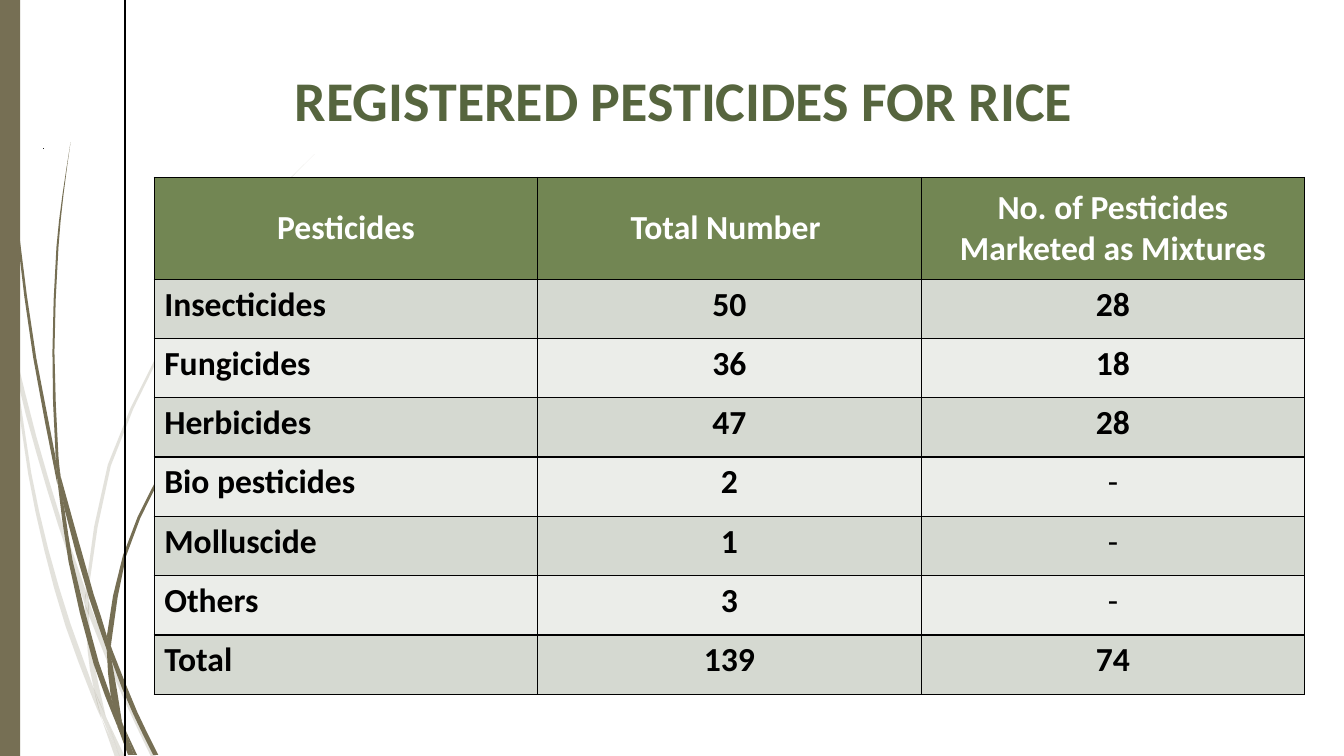
import pptx
import pptx.util
import pptx.dml.color
import pptx.enum.shapes
import pptx.enum.text
import pptx.oxml
import pptx.oxml.ns

Inches, Pt = pptx.util.Inches, pptx.util.Pt
ALIGN, ANCHOR = pptx.enum.text.PP_ALIGN, pptx.enum.text.MSO_ANCHOR

TITLE = "REGISTERED PESTICIDES FOR RICE"
HEADER = ("Pesticides", "Total Number ", "No. of Pesticides Marketed as Mixtures")
ROWS = [
    ("Insecticides", "50", "28"),
    ("Fungicides", "36", "18"),
    ("Herbicides", "47", "28"),
    ("Bio pesticides", "2", "-"),
    ("Molluscide", "1", "-"),
    ("Others", "3", "-"),
    ("Total", "139", "74"),
]

# Each blade of grass is its left edge and its right edge, from top to bottom, as (x, y) in inches.
PALE_BLADES = [
    ([(0, 2.82), (0, 2.99), (.1, 3.44), (.11, 3.5)], [(0, 2.82), (.09, 3.22), (.11, 3.5)]),
    ([(.14, 3.45), (.17, 3.76), (.36, 4.49), (.58, 5.22), (.84, 5.99)],
     [(.14, 3.45), (.36, 4.33), (.62, 5.2), (.85, 5.86), (.84, 5.99)]),
    ([(.88, 5.96), (.88, 6.1), (1.23, 6.94), (1.5, 7.51)],
     [(.88, 5.96), (.92, 6.07), (1.27, 6.92), (1.55, 7.51)]),
    ([(1.05, 7.11), (1.19, 7.51)], [(1.05, 7.11), (1.24, 7.51)]),
    ([(.11, 3.5), (.28, 4.7), (.44, 5.46), (.65, 6.21), (.92, 6.93), (1.01, 7.14)],
     [(.11, 3.5), (.17, 3.76), (.31, 4.69), (.48, 5.45), (.7, 6.19), (.93, 6.83), (1.01, 7.14)]),
    ([(.84, 5.99), (.87, 6.46), (.93, 6.83), (1.05, 7.11)],
     [(.84, 5.99), (.88, 6.08), (.91, 6.46), (1.05, 7.11)]),
    ([(3.12, 1.53), (2.68, 1.97), (2.28, 2.44), (1.91, 2.95), (1.58, 3.48), (1.07, 4.61),
      (.85, 5.84), (.88, 5.96)],
     [(3.12, 1.53), (2.68, 1.98), (2.29, 2.45), (1.93, 2.95), (1.6, 3.49), (1.1, 4.62),
      (.88, 5.84), (.88, 5.96)]),
    ([(1.01, 7.14), (1.14, 7.51)], [(1.01, 7.14), (1.19, 7.51)]),
    ([(.85, 5.86), (.84, 5.99), (.88, 6.1)], [(.85, 5.86), (.88, 5.96), (.88, 6.1)]),
    ([(.93, 6.83), (.99, 7.07), (1.19, 7.51)], [(.93, 6.83), (1.05, 7.11), (1.19, 7.51)]),
]
DARK_BLADES = [
    ([(.03, 0), (.07, 1.1), (.17, 2.33), (.33, 3.55), (.57, 4.81)],
     [(.04, 0), (.08, 1.09), (.19, 2.32), (.36, 3.55), (.55, 4.53), (.57, 4.81)]),
    ([(.6, 4.72), (.64, 5.05), (.88, 5.92), (1.06, 6.45)],
     [(.6, 4.72), (.93, 5.9), (1.06, 6.31), (1.06, 6.45)]),
    ([(1.1, 6.41), (1.11, 6.56), (1.32, 7.08), (1.52, 7.49)],
     [(1.1, 6.41), (1.13, 6.49), (1.36, 7.06), (1.57, 7.49)]),
    ([(.57, 4.77), (.68, 5.57), (.93, 6.59), (1.17, 7.22)],
     [(.57, 4.77), (.64, 5.05), (.72, 5.56), (.98, 6.57), (1.1, 6.91), (1.17, 7.22)]),
    ([(.7, 1.41), (.62, 1.93), (.56, 2.45), (.52, 3.49), (.55, 4.49), (.6, 4.72)],
     [(.7, 1.41), (.63, 1.93), (.58, 2.45), (.54, 3.49), (.58, 4.53), (.6, 4.72)]),
    ([(1.22, 7.19), (1.33, 7.49)], [(1.22, 7.19), (1.36, 7.49)]),
    ([(.55, 4.49), (.57, 4.77), (.64, 5.05)], [(.55, 4.49), (.6, 4.72), (.64, 5.05)]),
    ([(2.6, 3.44), (2.04, 4.05), (1.56, 4.74), (1.22, 5.51), (1.06, 6.31), (1.1, 6.41)],
     [(2.61, 3.44), (2.05, 4.06), (1.58, 4.76), (1.25, 5.52), (1.11, 6.33), (1.1, 6.41)]),
    ([(1.17, 7.22), (1.27, 7.49)], [(1.17, 7.22), (1.31, 7.49)]),
    ([(1.06, 6.45), (1.1, 6.91), (1.22, 7.19)],
     [(1.06, 6.45), (1.11, 6.56), (1.21, 7.16), (1.22, 7.19)]),
    ([(1.06, 6.31), (1.06, 6.45), (1.11, 6.56)], [(1.06, 6.31), (1.1, 6.41), (1.11, 6.56)]),
    ([(1.1, 6.91), (1.17, 7.22), (1.3, 7.49)], [(1.1, 6.91), (1.22, 7.19), (1.33, 7.49)]),
]

THEME = {
    "font": "Calibri", "title_size": 40, "table_size": 24,
    "earth": "766F54", "title": "56653E", "header": "728653",
    "bands": ("D5D9D1", "EBEDE9"), "white": "FFFFFF", "black": "000000", "dot": "262626",
}
SLIDE_W, SLIDE_H = 13.33, 7.5
RULE_X = 1.24
TABLE_X, TABLE_Y, TABLE_W, TABLE_H = 1.53, 1.76, 11.41, 5.13
HEADER_H = 1.01


def rgb(name):
    return pptx.dml.color.RGBColor.from_string(name)


def style(p, size, color, bold=True, align=ALIGN.CENTER):
    p.alignment = align
    for r in p.runs:
        r.font.name, r.font.size, r.font.bold = THEME["font"], Pt(size), bold
        r.font.color.rgb = rgb(color)


def smooth(edge):
    """Add the halfway point of a Hermite curve x(y) between each two points of an edge."""
    last = len(edge) - 1
    slopes = []
    for i in range(last + 1):
        (x0, y0), (x1, y1) = edge[max(i - 1, 0)], edge[min(i + 1, last)]
        slopes.append((x1 - x0) / (y1 - y0))
    points = [edge[0]]
    for i in range(last):
        (x0, y0), (x1, y1) = edge[i], edge[i + 1]
        bulge = (y1 - y0) * (slopes[i] - slopes[i + 1]) / 8
        points += [((x0 + x1) / 2 + bulge, (y0 + y1) / 2), (x1, y1)]
    return points


def paint(sp, color, opacity=100):
    sp.shadow.inherit = False
    sp.fill.solid()
    sp.fill.fore_color.rgb = rgb(color)
    sp.line.fill.background()
    if opacity < 100:
        clr = sp._element.spPr.find(".//" + pptx.oxml.ns.qn("a:srgbClr"))
        clr.append(pptx.oxml.parse_xml(
            f'<a:alpha {pptx.oxml.ns.nsdecls("a")} val="{opacity * 1000}"/>'))


def add_blade(s, left, right, opacity):
    outline = [(Inches(x), Inches(y)) for x, y in smooth(left) + smooth(right)[::-1]]
    builder = s.shapes.build_freeform(*outline[0])
    builder.add_line_segments(outline[1:], close=True)
    paint(builder.convert_to_shape(), THEME["earth"], opacity)


def add_rule(s, x, y0, y1, color):
    line = s.shapes.add_connector(pptx.enum.shapes.MSO_CONNECTOR.STRAIGHT,
                                  Inches(x), Inches(y0), Inches(x), Inches(y1))
    line.line.color.rgb = rgb(color)
    line.line.width = Pt(1)
    line._element.spPr.append(
        pptx.oxml.parse_xml(f'<a:effectLst {pptx.oxml.ns.nsdecls("a")}/>'))


def add_borders(cell):
    tcPr = cell._tc.get_or_add_tcPr()
    for side in ("lnL", "lnR", "lnT", "lnB"):
        tcPr.append(pptx.oxml.parse_xml(
            f'<a:{side} {pptx.oxml.ns.nsdecls("a")} w="{Pt(1)}"><a:solidFill>'
            f'<a:srgbClr val="{THEME["black"]}"/></a:solidFill></a:{side}>'))


def add_title(s):
    box = s.shapes.add_textbox(Inches(RULE_X), Inches(0.27), Inches(11.08), Inches(1.1))
    tf = box.text_frame
    tf.word_wrap = True
    tf.vertical_anchor = ANCHOR.BOTTOM
    tf.margin_left = tf.margin_right = 0
    tf.text = TITLE
    style(tf.paragraphs[0], THEME["title_size"], THEME["title"])


def add_pesticide_table(s):
    table = s.shapes.add_table(len(ROWS) + 1, len(HEADER), Inches(TABLE_X), Inches(TABLE_Y),
                               Inches(TABLE_W), Inches(TABLE_H)).table
    row_h = (TABLE_H - HEADER_H) / len(ROWS)
    for col in table.columns:
        col.width = Inches(TABLE_W / len(HEADER))
    for i, values in enumerate([HEADER] + ROWS):
        is_header = i == 0
        table.rows[i].height = Inches(HEADER_H if is_header else row_h)
        for j, value in enumerate(values):
            cell = table.cell(i, j)
            add_borders(cell)
            cell.fill.solid()
            cell.fill.fore_color.rgb = rgb(THEME["header"] if is_header else THEME["bands"][(i - 1) % 2])
            cell.vertical_anchor = ANCHOR.MIDDLE if is_header else ANCHOR.TOP
            cell.text_frame.text = value
            style(cell.text_frame.paragraphs[0], THEME["table_size"],
                  THEME["white"] if is_header else THEME["black"], bold=value != "-",
                  align=ALIGN.CENTER if is_header or j else ALIGN.LEFT)


def main():
    prs = pptx.Presentation()
    prs.slide_width, prs.slide_height = Inches(SLIDE_W), Inches(SLIDE_H)
    s = prs.slides.add_slide(prs.slide_layouts[6])
    for blades, opacity in ((PALE_BLADES, 20), (DARK_BLADES, 100)):
        for left, right in blades:
            add_blade(s, left, right, opacity)
    bar = s.shapes.add_shape(pptx.enum.shapes.MSO_SHAPE.RECTANGLE, 0, 0, Inches(0.2), Inches(SLIDE_H))
    paint(bar, THEME["earth"])
    add_rule(s, 0.43, 1.47, 1.48, THEME["dot"])
    add_rule(s, RULE_X, 0, SLIDE_H, THEME["black"])
    add_title(s)
    add_pesticide_table(s)
    prs.save("out.pptx")


if __name__ == "__main__":
    main()
